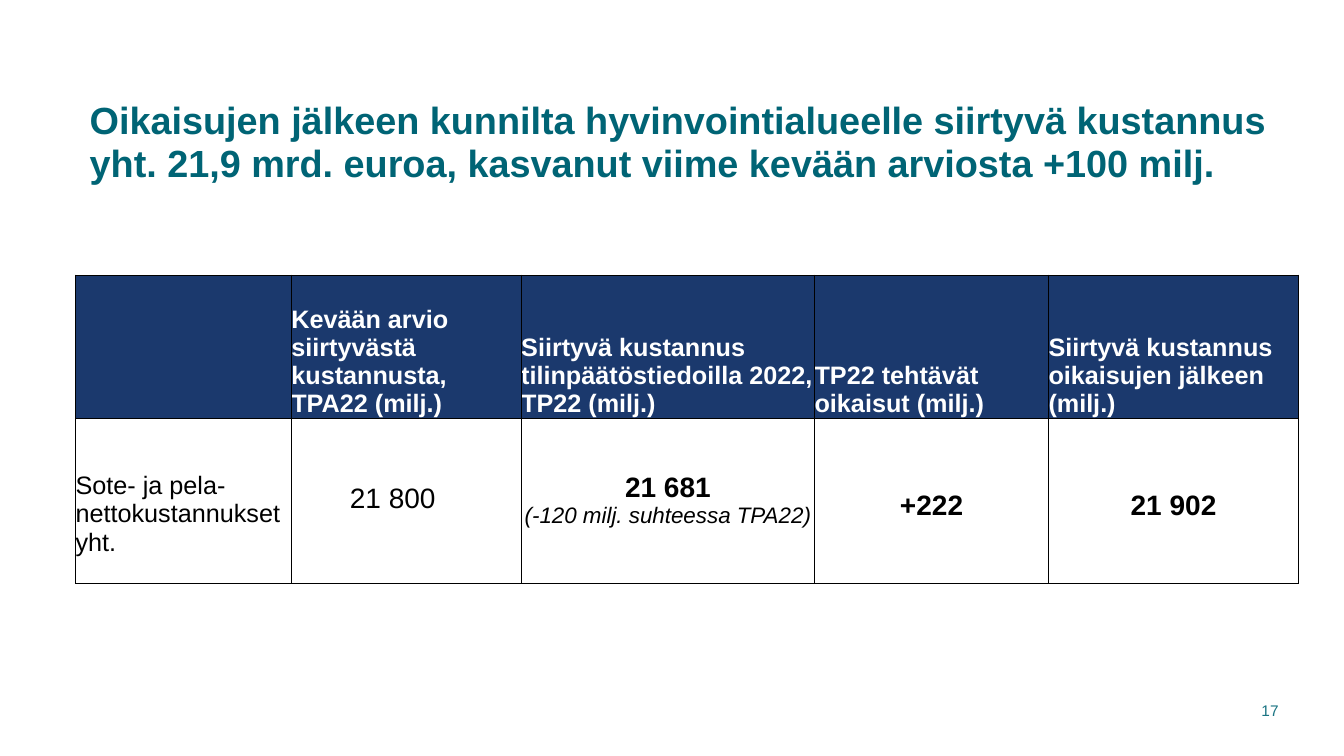
from lxml.etree import SubElement
from pptx import Presentation
from pptx.dml.color import RGBColor
from pptx.enum.text import MSO_ANCHOR, PP_ALIGN
from pptx.oxml.ns import qn
from pptx.util import Inches, Pt

TEAL = RGBColor(0x00, 0x64, 0x75)
PAGE_TEAL = RGBColor(0x1A, 0x74, 0x83)
NAVY = RGBColor(0x1B, 0x39, 0x6D)
WHITE = RGBColor(0xFF, 0xFF, 0xFF)
BLACK = RGBColor(0x00, 0x00, 0x00)

TITLE = ("Oikaisujen jälkeen kunnilta hyvinvointialueelle siirtyvä kustannus "
         "yht. 21,9 mrd. euroa, kasvanut viime kevään arviosta +100 milj.")
PAGE_NUMBER = "17"
COLUMN_WIDTHS = [2.14, 2.28, 2.91, 2.32, 2.48]
ROW_HEIGHTS = [1.42, 1.64]
HEADERS = [
    [],
    ["Kevään arvio", "siirtyvästä kustannusta,", "TPA22 (milj.)"],
    ["Siirtyvä kustannus tilinpäätöstiedoilla 2022, TP22 (milj.)"],
    ["TP22 tehtävät oikaisut (milj.)"],
    ["Siirtyvä kustannus oikaisujen jälkeen (milj.)"],
]
# Lines as (text, size, bold, italic), then alignment, left and bottom margin
COSTS = [
    ([("Sote- ja pela-nettokustannukset yht.", 18, False, False)], PP_ALIGN.LEFT, 0, 0.27),
    ([("21 800", 20, False, False)], PP_ALIGN.LEFT, 0.58, 0.69),
    ([("21 681", 20, True, False),
      ("(-120 milj. suhteessa TPA22)", 16, False, True)], PP_ALIGN.CENTER, 0, 0.55),
    ([("+222", 20, True, False)], PP_ALIGN.CENTER, 0, 0.62),
    ([("21 902", 20, True, False)], PP_ALIGN.CENTER, 0, 0.62),
]


def add_run(p, text, size, color, bold=False, italic=False):
    r = p.add_run()
    r.text = text
    r.font.name = "Arial"
    r.font.size = Pt(size)
    r.font.bold = bold
    r.font.italic = italic
    r.font.color.rgb = color


def add_text(slide, left, top, width, height, side_margin):
    """Add a wrapping, vertically centred box and return its first paragraph."""
    box = slide.shapes.add_textbox(Inches(left), Inches(top), Inches(width), Inches(height))
    tf = box.text_frame
    tf.word_wrap = True
    tf.vertical_anchor = MSO_ANCHOR.MIDDLE
    tf.margin_left = tf.margin_right = Inches(side_margin)
    return tf.paragraphs[0]


def fill_cell(cell, lines, color, fill=None, align=PP_ALIGN.LEFT, left=0, bottom=0):
    cell.vertical_anchor = MSO_ANCHOR.BOTTOM
    cell.margin_left, cell.margin_bottom = Inches(left), Inches(bottom)
    cell.margin_right = cell.margin_top = 0
    tcPr = cell._tc.get_or_add_tcPr()
    for side in ("a:lnL", "a:lnR", "a:lnT", "a:lnB"):
        line = SubElement(tcPr, qn(side), w=str(Pt(1)))
        SubElement(SubElement(line, qn("a:solidFill")), qn("a:srgbClr"), val=str(BLACK))
    if fill is None:
        cell.fill.background()
    else:
        cell.fill.solid()
        cell.fill.fore_color.rgb = fill
    tf = cell.text_frame
    for i, (text, size, bold, italic) in enumerate(lines):
        p = tf.paragraphs[0] if i == 0 else tf.add_paragraph()
        p.alignment = align
        add_run(p, text, size, color, bold, italic)


def add_cost_table(slide):
    frame = slide.shapes.add_table(
        len(ROW_HEIGHTS), len(COLUMN_WIDTHS), Inches(0.75), Inches(2.73),
        Inches(sum(COLUMN_WIDTHS)), Inches(sum(ROW_HEIGHTS)))
    table = frame.table
    for column, width in zip(table.columns, COLUMN_WIDTHS):
        column.width = Inches(width)
    for row, height in zip(table.rows, ROW_HEIGHTS):
        row.height = Inches(height)
    for c, (header, cost) in enumerate(zip(HEADERS, COSTS)):
        header_lines = [(text, 18, True, False) for text in header]
        fill_cell(table.cell(0, c), header_lines, WHITE, NAVY)
        lines, align, left, bottom = cost
        fill_cell(table.cell(1, c), lines, BLACK, None, align, left, bottom)


def main():
    prs = Presentation()
    prs.slide_width, prs.slide_height = Inches(13.33), Inches(7.5)
    slide = prs.slides.add_slide(prs.slide_layouts[6])

    p = add_text(slide, 0.89, 0.79, 12.13, 1.25, 0)
    p.line_spacing = 0.95
    add_run(p, TITLE, 27, TEAL, bold=True)

    add_cost_table(slide)

    p = add_text(slide, 11.57, 6.85, 1.21, 0.4, 0.1)
    p.alignment = PP_ALIGN.RIGHT
    add_run(p, PAGE_NUMBER, 11, PAGE_TEAL)

    prs.save("out.pptx")


if __name__ == "__main__":
    main()
